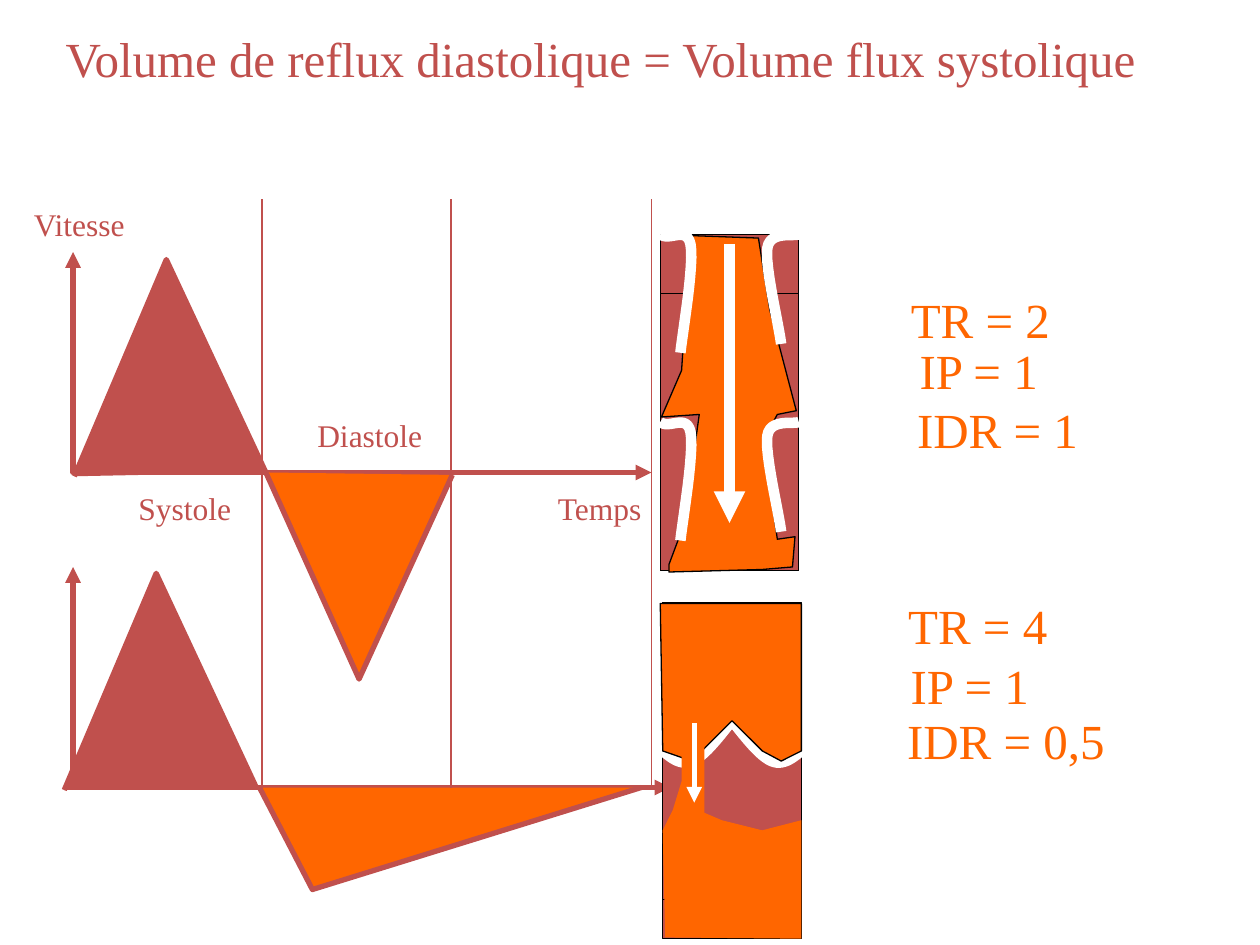
from dataclasses import dataclass

from lxml import etree
from pptx import Presentation
from pptx import util as u
from pptx.dml import color
from pptx.enum import shapes, text
from pptx.oxml import ns


@dataclass(frozen=True)
class Theme:
    red: str = "C0504D"
    orange: str = "FF6600"
    white: str = "FFFFFF"
    black: str = "000000"
    font: str = "Times New Roman"
    label: int = 18
    large: int = 28
    thin: float = 0.75
    medium: float = 3
    thick: float = 6


THEME = Theme()


def shifted(points, dx=0, dy=0):
    return [(x + dx, y + dy) for x, y in points]


def bezier(points, steps=12):
    curve = [points[0]]
    for start in range(0, len(points) - 1, 3):
        a, b, c, d = points[start:start + 4]
        for step in range(1, steps + 1):
            t = step / steps
            weights = ((1 - t) ** 3, 3 * t * (1 - t) ** 2, 3 * t * t * (1 - t), t ** 3)
            curve.append(tuple(sum(w * p[axis] for w, p in zip(weights, (a, b, c, d)))
                               for axis in (0, 1)))
    return curve


def format_line(shape, line_color, width, arrows=()):
    if line_color is None:
        shape.line.fill.background()
        return
    shape.line.color.rgb = color.RGBColor.from_string(line_color)
    shape.line.width = u.Pt(width)
    outline = shape.element.spPr.find(ns.qn("a:ln"))
    for end in arrows:
        etree.SubElement(outline, ns.qn(f"a:{end}")).set("type", "triangle")


def format_shape(shape, fill=None, line=None, width=THEME.thin, arrows=()):
    if fill:
        shape.fill.solid()
        shape.fill.fore_color.rgb = color.RGBColor.from_string(fill)
    else:
        shape.fill.background()
    format_line(shape, line, width, arrows)
    shape.shadow.inherit = False


def add_outline(parent, points, close=False, **style):
    corners = [(u.Inches(x), u.Inches(y)) for x, y in points]
    builder = parent.shapes.build_freeform(*corners[0])
    builder.add_line_segments(corners[1:], close=close)
    format_shape(builder.convert_to_shape(), **style)


def add_block(parent, left, top, width, height):
    shape = parent.shapes.add_shape(shapes.MSO_SHAPE.RECTANGLE, u.Inches(left), u.Inches(top),
                                    u.Inches(width), u.Inches(height))
    format_shape(shape, fill=THEME.red, line=THEME.black)


def add_vertical(parent, x, top, bottom, line, width, arrows=()):
    connector = parent.shapes.add_connector(shapes.MSO_CONNECTOR.STRAIGHT, u.Inches(x),
                                            u.Inches(top), u.Inches(x), u.Inches(bottom))
    format_line(connector, line, width, arrows)
    etree.SubElement(connector.element.spPr, ns.qn("a:effectLst"))


def write_text(shape, words, size=THEME.label, ink=THEME.red):
    frame = shape.text_frame
    frame.word_wrap = False
    frame.auto_size = text.MSO_AUTO_SIZE.SHAPE_TO_FIT_TEXT
    frame.vertical_anchor = text.MSO_ANCHOR.TOP
    paragraph = frame.paragraphs[0]
    paragraph.alignment = text.PP_ALIGN.LEFT
    run = paragraph.add_run()
    run.text = words
    run.font.name = THEME.font
    run.font.size = u.Pt(size)
    run.font.color.rgb = color.RGBColor.from_string(ink)


def add_label(slide, words, left, top, width, height, **style):
    box = slide.shapes.add_textbox(u.Inches(left), u.Inches(top),
                                   u.Inches(width), u.Inches(height))
    write_text(box, words, **style)


def add_title(slide, words):
    title = slide.shapes.title
    title.left, title.top = u.Inches(0.42), u.Inches(0.18)
    title.width, title.height = u.Inches(8.8), u.Inches(0.57)
    write_text(title, words, size=THEME.large)


def add_curves(slide):
    refluxes = [[(2.11, 3.75), (2.85, 5.39), (3.59, 3.77)],
                [(2.06, 6.25), (2.48, 7.06), (5.09, 6.25)]]
    for top, right, reflux in zip((2, 4.5), (5.17, 5.32), refluxes):
        base = top + 1.75
        add_outline(slide, [(0.58, top), (0.58, base), (right, base)], line=THEME.red,
                    width=THEME.medium, arrows=("headEnd", "tailEnd"))
        add_outline(slide, reflux, fill=THEME.orange, line=THEME.red, width=THEME.medium)
    for x in (2.08, 3.58, 5.17):
        add_vertical(slide, x, 1.58, 6.25, THEME.red, THEME.thin)
    systole = [(0.59, 3.78), (1.32, 2.06), (2.11, 3.75)]
    for dx, dy in ((0, 0), (-0.08, 2.49)):
        add_outline(slide, shifted(systole, dx, dy), fill=THEME.red, line=THEME.red,
                    width=THEME.medium)


def add_small_leak(slide):
    vessel = slide.shapes.add_group_shape()
    add_block(vessel, 5.26, 4.78, 1.1, 2.67)
    add_block(vessel, 5.26, 4.94, 1.1, 2.2)
    leaflet = [(5.26, 5.96), (5.33, 6.02), (5.41, 6.08), (5.5, 6.04),
               (5.59, 6), (5.7, 5.86), (5.81, 5.72)]
    mirrored = [(2 * 5.81 - x, y) for x, y in leaflet]
    for valve in (leaflet, mirrored):
        add_outline(vessel, bezier(valve), line=THEME.white, width=THEME.thick)
    upstream = [(5.24, 4.79), (6.36, 4.79), (6.36, 5.96), (6.2, 6.04), (6.05, 5.96),
                (5.81, 5.72), (5.73, 5.8), (5.49, 6.04), (5.26, 5.96)]
    add_outline(vessel, upstream, close=True, fill=THEME.orange, line=THEME.black)
    leak = [(5.41, 5.8), (5.41, 6.2), (5.34, 6.43), (5.26, 6.59), (5.28, 7.44), (6.36, 7.45),
            (6.36, 6.51), (6.05, 6.59), (5.73, 6.51), (5.59, 6.45), (5.59, 5.85)]
    add_outline(vessel, leak, fill=THEME.orange)
    add_vertical(vessel, 5.51, 5.74, 6.37, THEME.white, THEME.medium, ("tailEnd",))


def add_large_leak(slide):
    vessel = slide.shapes.add_group_shape()
    add_block(vessel, 5.24, 1.86, 1.1, 2.67)
    add_block(vessel, 5.24, 2.33, 1.1, 2.2)
    flow = [(5.48, 1.87), (6.02, 1.89), (6.11, 2.46), (6.32, 3.26), (6.17, 3.29), (6.06, 3.49),
            (6.17, 4.28), (6.31, 4.26), (6.29, 4.5), (6.05, 4.52), (5.31, 4.54), (5.31, 4.48),
            (5.43, 4.16), (5.55, 3.29), (5.25, 3.31), (5.41, 2.94)]
    add_outline(vessel, flow, close=True, fill=THEME.orange, line=THEME.black)
    add_vertical(vessel, 5.79, 1.94, 4.15, THEME.white, THEME.thick, ("tailEnd",))
    left = [(5.24, 3.35), (5.31, 3.41), (5.45, 3.28), (5.48, 3.43),
            (5.51, 3.59), (5.42, 4.11), (5.4, 4.29)]
    right = [(6.34, 3.35), (6.3, 3.37), (6.11, 3.32), (6.09, 3.46),
             (6.07, 3.61), (6.18, 4.06), (6.2, 4.22)]
    for dy in (0, -1.49):
        for leaflet in (left, right):
            add_outline(vessel, bezier(shifted(leaflet, dy=dy)), line=THEME.white,
                        width=THEME.thick)


def main():
    presentation = Presentation()
    presentation.slide_width, presentation.slide_height = u.Inches(10), u.Inches(7.5)
    slide = presentation.slides.add_slide(presentation.slide_layouts.get_by_name("Title Only"))
    add_title(slide, "Volume de reflux diastolique = Volume flux systolique")
    add_curves(slide)
    for words, left, top, width in (("Systole", 1, 3.83, 0.94), ("Diastole", 2.42, 3.25, 1.03),
                                    ("Vitesse", 0.17, 1.58, 0.94), ("Temps", 4.33, 3.83, 0.88)):
        add_label(slide, words, left, top, width, 0.4)
    add_small_leak(slide)
    add_large_leak(slide)
    for words, left, top, width in (("TR = 2", 7.13, 2.25, 1.35), ("IP = 1", 7.2, 2.65, 1.2),
                                    ("IDR = 1", 7.18, 3.12, 1.53), ("TR = 4", 7.11, 4.68, 1.35),
                                    ("IP = 1", 7.13, 5.15, 1.2), ("IDR = 0,5", 7.1, 5.59, 1.82)):
        add_label(slide, words, left, top, width, 0.57, size=THEME.large, ink=THEME.orange)
    presentation.save("out.pptx")


if __name__ == "__main__":
    main()
